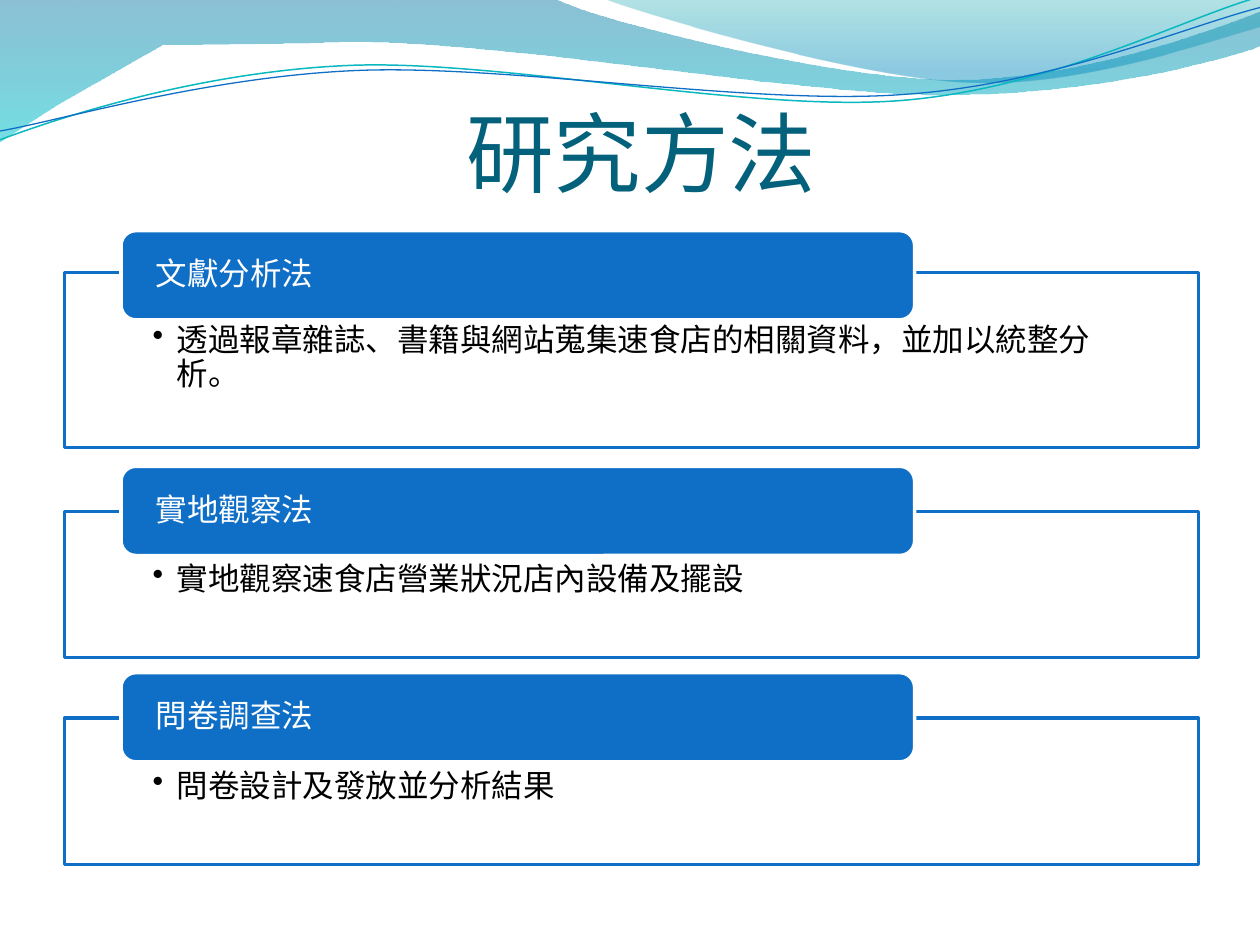
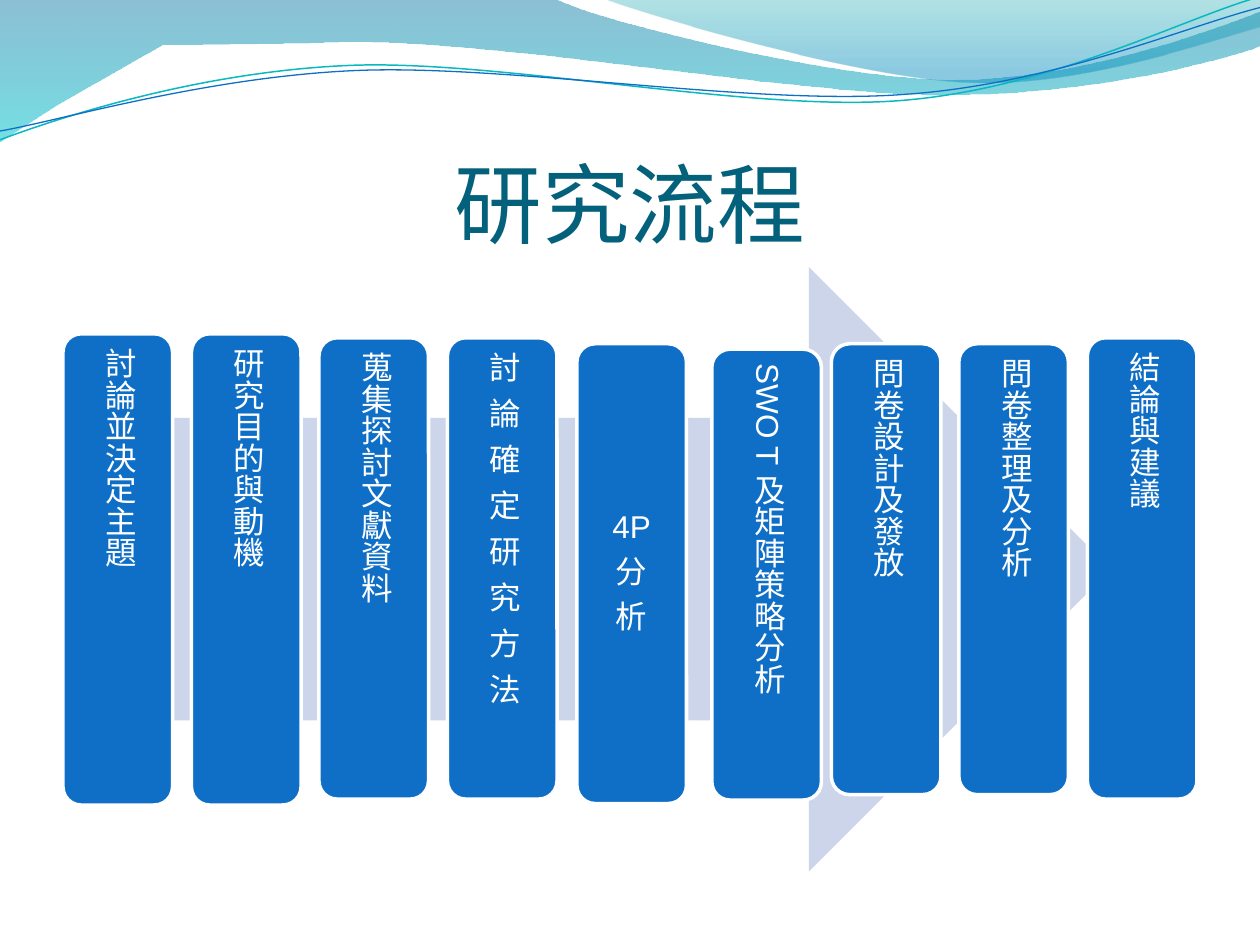
"""Build two slides on the research methods and the research process."""
from pptx import Presentation, util as u
from pptx.dml.color import RGBColor
from pptx.enum import shapes, text
from pptx.oxml.ns import qn
from lxml import etree

BLUE, TEAL, WHITE, BLACK, PALE = "0F6FC6", "04617B", "FFFFFF", "000000", "CCD5EA"
TITLE_FONT, BODY_FONT = "Calibri", "Arial"
CENTER, LEFT = text.PP_ALIGN.CENTER, text.PP_ALIGN.LEFT
TOP, MIDDLE, BOTTOM = (text.MSO_ANCHOR.TOP, text.MSO_ANCHOR.MIDDLE,
                       text.MSO_ANCHOR.BOTTOM)


def paint(fill, *colours):
    """Fill with one colour, or with a gradient from top to bottom."""
    if len(colours) == 1:
        fill.solid()
        fill.fore_color.rgb = RGBColor.from_string(colours[0])
        return
    fill.gradient()
    fill.gradient_angle = 270
    for stop, colour in zip(fill.gradient_stops, colours):
        stop.color.rgb = RGBColor.from_string(colour)


def write(frame, wording, size=18, font=BODY_FONT, colour=WHITE, align=LEFT,
          anchor=MIDDLE, insets=(0, 0, 0, 0), line=0.9, after=0):
    """Write each line of the wording as a formatted paragraph."""
    frame.word_wrap = True
    frame.auto_size = text.MSO_AUTO_SIZE.NONE
    frame.vertical_anchor = anchor
    (frame.margin_left, frame.margin_top,
     frame.margin_right, frame.margin_bottom) = map(u.Cm, insets)
    frame.text = wording
    for paragraph in frame.paragraphs:
        paragraph.alignment = align
        paragraph.line_spacing = line
        paragraph.space_before = u.Pt(0)
        paragraph.space_after = u.Pt(after)
        run_font = paragraph.runs[0].font
        run_font.name, run_font.size = font, u.Pt(size)
        paint(run_font.fill, colour)


deck = Presentation()
deck.slide_width, deck.slide_height = u.Cm(25.4), u.Cm(19.05)
layout = deck.slide_layouts[5]

titles = [("研究方法", 1.5, 1.32, 2.79), ("研究流程", 1.27, 1.96, 3.18)]
slides = []
for wording, left, top, height in titles:
    slide = deck.slides.add_slide(layout)
    title = slide.shapes.title
    title.left, title.top = u.Cm(left), u.Cm(top)
    title.width, title.height = u.Cm(22.86), u.Cm(height)
    write(title.text_frame, wording, size=50, font=TITLE_FONT, colour=TEAL,
          align=CENTER, anchor=BOTTOM, insets=(0, 0.13, 0, 0), line=1)
    slides.append(slide)
methods, process = slides

# Steps: L is a straight segment, C a curve with two control points; points in 1/100 inch.
waves = [
    ("LCCLCCL", [(0, 0), (440, -1), (476, 17), (664, 63), (758, 63), (853, 63),
                 (958, 26), (1000, 9), (1001, 36), (983, 44), (870, 76), (746, 75),
                 (622, 75), (382, 28), (257, 34), (129, 36), (46, 83), (-1, 113),
                 (0, 0)], ("0074A1", "00C6CF"), (45, 55), 1),
    ("CCLL", [(479, -1), (509, 11), (682, 62), (769, 65), (856, 69), (961, 32),
              (1000, 21), (1000, 0), (479, -1)],
     ("00A1A9", "008BBF"), (30, 45), 0.8),
]
strands = [
    ("0AB8BF", 0.85, [(0, 111), (48, 93), (158, 57), (277, 52), (395, 47), (593, 89),
                      (713, 80), (833, 71), (938, 15), (998, -2)]),
    (BLUE, 0.75, [(0, 104), (47, 96), (164, 61), (283, 56), (403, 51), (597, 84),
                  (717, 75), (836, 67), (941, 21), (1000, 6)]),
]
outlines = [(steps, points) for steps, points, *_ in waves]
outlines += [("CCC", points) for *_, points in strands]
bands = []
for steps, points in outlines:
    builder = methods.shapes.build_freeform(*points[0], scale=u.Cm(2.54) / 100)
    builder.add_line_segments(points[1:], close="L" in steps)
    band = builder.convert_to_shape()
    band.shadow.inherit = False
    segments = iter(band.element.findall(".//" + qn("a:lnTo")))
    for step in steps:
        segment = next(segments)
        if step == "C":
            curve = etree.Element(qn("a:cubicBezTo"))
            segment.addprevious(curve)
            for part in (segment, next(segments), next(segments)):
                curve.append(part[0])
                part.getparent().remove(part)
    bands.append(band)

for band, (_, _, colours, opacities, end) in zip(bands, waves):
    paint(band.fill, *colours)
    band.fill.gradient_stops[1].position = end
    band.line.fill.background()
    tints = band.element.findall(".//" + qn("a:gs") + "/" + qn("a:srgbClr"))
    for tint, opacity in zip(tints, opacities):
        etree.SubElement(tint, qn("a:alpha"), val=str(opacity * 1000))
for band, (colour, width, _) in zip(bands[len(waves):], strands):
    band.fill.background()
    paint(band.line.fill, colour)
    band.line.width = u.Pt(width)
for band in bands:
    layout.shapes.element.append(band.element)

method_rows = [
    ("文獻分析法", "透過報章雜誌、書籍與網站蒐集速食店的相關資料，並加以統整分析。",
     4.65, 5.49, 3.53),
    ("實地觀察法", "實地觀察速食店營業狀況店內設備及擺設", 9.4, 10.31, 2.95),
    ("問卷調查法", "問卷設計及發放並分析結果", 13.56, 14.48, 2.95),
]
for name, detail, name_top, detail_top, detail_height in method_rows:
    panel = methods.shapes.add_shape(
        shapes.MSO_SHAPE.RECTANGLE, u.Cm(1.3), u.Cm(detail_top),
        u.Cm(22.86), u.Cm(detail_height))
    heading = methods.shapes.add_shape(
        shapes.MSO_SHAPE.ROUNDED_RECTANGLE, u.Cm(2.44), u.Cm(name_top),
        u.Cm(16), u.Cm(1.8))
    for part, fill, line in ((panel, WHITE, BLUE), (heading, BLUE, WHITE)):
        part.shadow.inherit = False
        paint(part.fill, fill)
        paint(part.line.fill, line)
        part.line.width = u.Pt(2)
    write(panel.text_frame, detail, colour=BLACK, anchor=TOP,
          insets=(1.78, 1.04, 1.78, 0.36), after=2.7)
    bullet = panel.text_frame.paragraphs[0]._p.get_or_add_pPr()
    bullet.set("marL", str(u.Cm(0.48)))
    bullet.set("indent", str(-u.Cm(0.48)))
    etree.SubElement(bullet, qn("a:buChar"), char="•")
    write(heading.text_frame, name, insets=(0.61, 0, 0.61, 0))

arrow = process.shapes.add_shape(
    shapes.MSO_SHAPE.RIGHT_ARROW, u.Cm(2.97), u.Cm(5.38), u.Cm(19.43), u.Cm(12.19))
arrow.shadow.inherit = False
paint(arrow.fill, PALE)
arrow.line.fill.background()

spaced_step, upright_step = "討 論 確 定 研 究 方 法", "4P\n分\n析"
process_steps = [
    ("討論並決定主題", 1.27, 6.73, 9.5),
    ("研究目的與動機", 3.86, 6.73, 9.5),
    ("蒐集探討文獻資料", 6.43, 6.81, 9.3),
    (spaced_step, 9.02, 6.81, 9.3),
    (upright_step, 11.63, 6.93, 9.27),
    ("SWO T 及矩陣策略分析", 14.35, 7.04, 9.09),
    ("問卷設計及發放", 16.76, 6.93, 9.09),
    ("問卷整理及分析", 19.33, 6.93, 9.09),
    ("結論與建議", 21.92, 6.81, 9.3),
]
for wording, left, top, height in process_steps:
    step = process.shapes.add_shape(
        shapes.MSO_SHAPE.ROUNDED_RECTANGLE, u.Cm(left), u.Cm(top),
        u.Cm(2.21), u.Cm(height))
    step.shadow.inherit = False
    paint(step.fill, BLUE)
    paint(step.line.fill, WHITE)
    step.line.width = u.Pt(2)
    write(step.text_frame, wording, align=CENTER, insets=(0.18,) * 4, after=6.3)
    if wording != upright_step:
        step.text_frame._txBody.bodyPr.set("vert", "eaVert")
    if wording == spaced_step:
        step.text_frame.paragraphs[0].runs[0].font._element.set("spc", "200")

deck.save("out.pptx")
